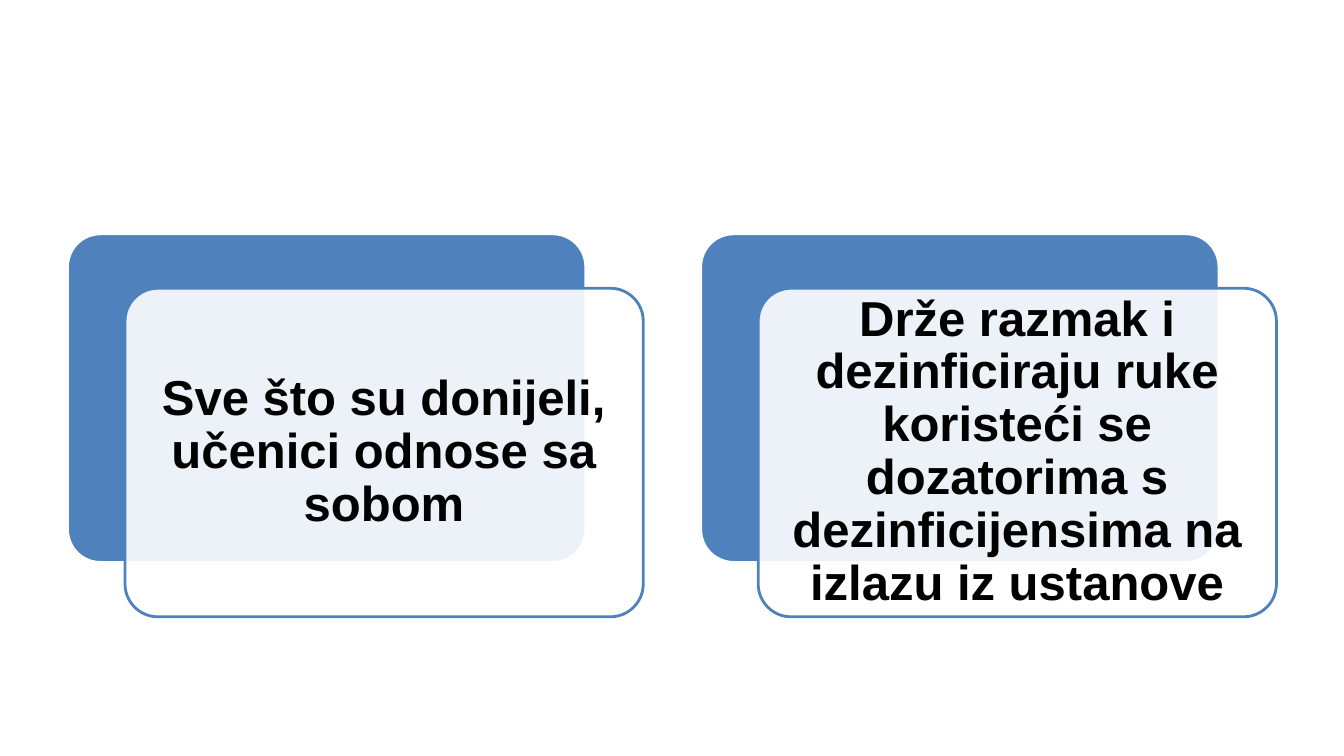
"""Build a slide with two layered cards about leaving the school."""
from pptx import Presentation
from pptx import util as u
from pptx.dml.color import RGBColor
from pptx.enum import shapes, text
from pptx.oxml import ns
from lxml import etree

COLORS = {"blue": "4F81BD", "white": "FFFFFF", "black": "000000"}
CARDS = [
    "Sve što su donijeli, učenici odnose sa sobom",
    "Drže razmak i dezinficiraju ruke koristeći se dozatorima s dezinficijensima na izlazu iz ustanove",
]
CARD_LEFT, CARD_TOP, CARD_PITCH = 0.67, 2.32, 6.28
CARD_WIDTH, CARD_HEIGHT = 5.14, 3.26
OFFSET_X, OFFSET_Y = 0.57, 0.54
INSET = 0.1


def add_card(slide, left, top, fill, line):
    shape = slide.shapes.add_shape(
        shapes.MSO_SHAPE.ROUNDED_RECTANGLE,
        u.Inches(left), u.Inches(top), u.Inches(CARD_WIDTH), u.Inches(CARD_HEIGHT))
    shape.adjustments[0] = 0.1
    shape.shadow.inherit = False
    shape.fill.solid()
    shape.fill.fore_color.rgb = RGBColor.from_string(COLORS[fill])
    shape.line.color.rgb = RGBColor.from_string(COLORS[line])
    shape.line.width = u.Pt(2)
    return shape


presentation = Presentation()
presentation.slide_width = u.Inches(13.33)
presentation.slide_height = u.Inches(7.5)
slide = presentation.slides.add_slide(presentation.slide_layouts[6])

for index, message in enumerate(CARDS):
    left = CARD_LEFT + index * CARD_PITCH
    add_card(slide, left, CARD_TOP, "blue", "white")

    front_left, front_top = left + OFFSET_X, CARD_TOP + OFFSET_Y
    front = add_card(slide, front_left, front_top, "white", "blue")
    fill_color = front.fill._xPr.find(ns.qn("a:solidFill"))[0]
    etree.SubElement(fill_color, ns.qn("a:alpha"), val="90000")

    label = slide.shapes.add_textbox(
        u.Inches(front_left + INSET), u.Inches(front_top + INSET),
        u.Inches(CARD_WIDTH - 2 * INSET), u.Inches(CARD_HEIGHT - 2 * INSET))
    frame = label.text_frame
    frame.word_wrap = True
    frame.vertical_anchor = text.MSO_ANCHOR.MIDDLE
    frame.margin_left = frame.margin_right = u.Inches(0.15)
    frame.margin_top = frame.margin_bottom = u.Inches(0.15)
    paragraph = frame.paragraphs[0]
    paragraph.alignment = text.PP_ALIGN.CENTER
    paragraph.line_spacing = 0.9
    run = paragraph.add_run()
    run.text = message
    run.font.name = "Arial"
    run.font.size = u.Pt(35)
    run.font.bold = True
    run.font.color.rgb = RGBColor.from_string(COLORS["black"])

presentation.save("out.pptx")
